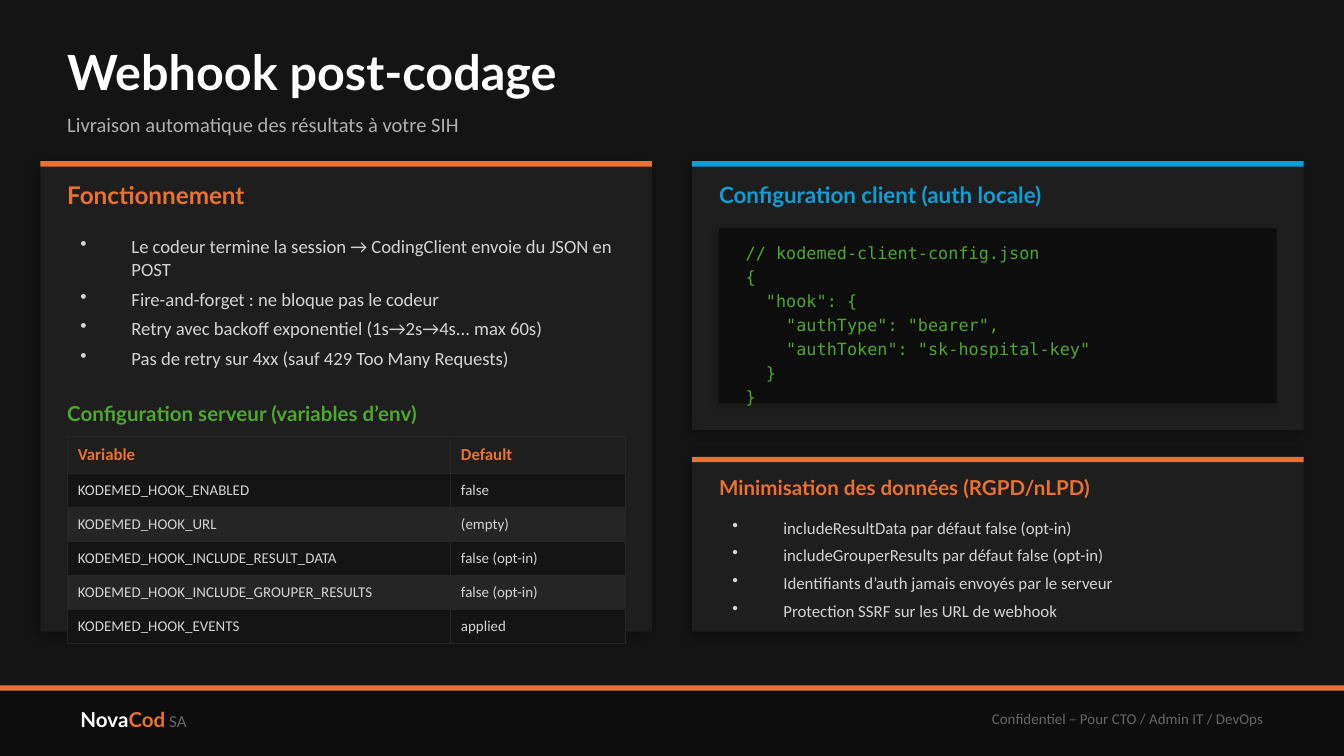
from dataclasses import dataclass

import pptx
import pptx.dml.color
import pptx.enum.shapes
import pptx.enum.text
import pptx.oxml
import pptx.oxml.ns
import pptx.util
from pptx.util import Inches

ALIGN = pptx.enum.text.PP_ALIGN
ANCHOR = pptx.enum.text.MSO_ANCHOR


@dataclass(frozen=True)
class Theme:
    background: str = "141414"
    panel: str = "1E1E1E"
    dark: str = "0D0D0D"
    stripe: str = "252525"
    orange: str = "E97132"
    blue: str = "0F9ED5"
    green: str = "4EA72E"
    white: str = "FFFFFF"
    body: str = "D4D4D4"
    subtitle: str = "B0B0B0"
    muted: str = "666666"
    heading_font: str = "Lato"
    body_font: str = "Calibri"
    code_font: str = "DejaVu Sans Mono"
    title_size: int = 26
    panel_size: int = 13
    client_size: int = 12
    medium_size: int = 11
    list_size: int = 10
    small_size: int = 9
    tiny_size: int = 8


THEME = Theme()


@dataclass(frozen=True)
class Box:
    left: float
    top: float
    width: float
    height: float

    def lengths(self) -> list:
        return [Inches(v) for v in (self.left, self.top, self.width, self.height)]


@dataclass(frozen=True)
class Style:
    size: int
    color: str
    font: str = THEME.body_font
    bold: bool = False


@dataclass(frozen=True)
class Shadow:
    opacity: int
    blur: int
    distance: int


@dataclass(frozen=True)
class Panel:
    box: Box
    accent: str
    heading: str
    heading_size: int
    heading_height: float


PANEL_SHADOW = Shadow(35, 8, 3)
CODE_SHADOW = Shadow(20, 4, 2)
ACCENT_HEIGHT = 0.04
PADDING = 0.2


def rgb(color: str):
    return pptx.dml.color.RGBColor.from_string(color)


def add_rectangle(slide, box: Box, color: str, shadow: Shadow | None = None) -> None:
    shape = slide.shapes.add_shape(pptx.enum.shapes.MSO_SHAPE.RECTANGLE, *box.lengths())
    shape.fill.solid()
    shape.fill.fore_color.rgb = rgb(color)
    shape.line.fill.background()
    shape.shadow.inherit = False
    if shadow:
        effects = shape.element.spPr.find(pptx.oxml.ns.qn("a:effectLst"))
        effects.append(pptx.oxml.parse_xml(
            f'<a:outerShdw {pptx.oxml.ns.nsdecls("a")} blurRad="{pptx.util.Pt(shadow.blur)}" '
            f'dist="{pptx.util.Pt(shadow.distance)}" dir="{135 * 60000}" algn="bl" '
            f'rotWithShape="0"><a:srgbClr val="000000">'
            f'<a:alpha val="{shadow.opacity * 1000}"/></a:srgbClr></a:outerShdw>'))


def add_run(paragraph, text: str, style: Style) -> None:
    run = paragraph.add_run()
    run.text = text
    run.font.name = style.font
    run.font.size = pptx.util.Pt(style.size)
    run.font.bold = style.bold
    run.font.color.rgb = rgb(style.color)


def add_frame(slide, box: Box, anchor, inset: bool = True):
    frame = slide.shapes.add_textbox(*box.lengths()).text_frame
    frame.word_wrap = True
    frame.vertical_anchor = anchor
    if not inset:
        frame.margin_left = frame.margin_right = Inches(0)
        frame.margin_top = frame.margin_bottom = Inches(0)
    return frame


def add_line(slide, box: Box, runs: list[tuple[str, Style]], inset: bool = False,
             align=ALIGN.LEFT) -> None:
    paragraph = add_frame(slide, box, ANCHOR.MIDDLE, inset).paragraphs[0]
    paragraph.alignment = align
    for text, style in runs:
        add_run(paragraph, text, style)


def add_lines(slide, box: Box, lines: list[str], style: Style, space: int,
              bullets: bool = False) -> None:
    frame = add_frame(slide, box, ANCHOR.TOP)
    for index, text in enumerate(lines):
        paragraph = frame.add_paragraph() if index else frame.paragraphs[0]
        if bullets:
            properties = paragraph._p.get_or_add_pPr()
            properties.set("marL", str(Inches(0.38)))
            properties.set("indent", str(Inches(-0.38)))
            properties.append(pptx.oxml.parse_xml(
                f'<a:buChar {pptx.oxml.ns.nsdecls("a")} char="•"/>'))
        paragraph.space_after = pptx.util.Pt(space)
        add_run(paragraph, text, style)


def add_panel(slide, panel: Panel) -> None:
    box = panel.box
    add_rectangle(slide, box, THEME.panel, PANEL_SHADOW)
    add_rectangle(slide, Box(box.left, box.top, box.width, ACCENT_HEIGHT), panel.accent)
    heading_box = Box(box.left + PADDING, box.top + 0.1, box.width - 2 * PADDING,
                      panel.heading_height)
    add_line(slide, heading_box, [(panel.heading, Style(
        panel.heading_size, panel.accent, THEME.heading_font, True))])


def fill_cell(cell, text: str, style: Style, color: str) -> None:
    cell.fill.solid()
    cell.fill.fore_color.rgb = rgb(color)
    cell.vertical_anchor = ANCHOR.MIDDLE
    cell.margin_left = cell.margin_right = Inches(0.08)
    cell.margin_top = cell.margin_bottom = Inches(0.06)
    add_run(cell.text_frame.paragraphs[0], text, style)
    for index, side in enumerate("LRTB"):
        cell._tc.get_or_add_tcPr().insert(index, pptx.oxml.parse_xml(
            f'<a:ln{side} {pptx.oxml.ns.nsdecls("a")} w="{pptx.util.Pt(0.5)}"><a:solidFill>'
            f'<a:srgbClr val="{THEME.stripe}"/></a:solidFill></a:ln{side}>'))


def add_variable_table(slide, box: Box, rows: list[tuple[str, str]]) -> None:
    table = slide.shapes.add_table(len(rows), 2, *box.lengths()).table
    table.first_row = table.horz_banding = False
    for column, width in zip(table.columns, (2.85, 1.3)):
        column.width = Inches(width)
    for index, values in enumerate(rows):
        table.rows[index].height = Inches(0.24 if index else 0.27)
        if index:
            style = Style(THEME.tiny_size, THEME.body)
            color = THEME.background if index % 2 else THEME.stripe
        else:
            style = Style(THEME.small_size, THEME.orange, bold=True)
            color = THEME.panel
        for column, text in enumerate(values):
            fill_cell(table.cell(index, column), text, style, color)


def main() -> None:
    presentation = pptx.Presentation()
    presentation.slide_width = Inches(10)
    presentation.slide_height = Inches(10 * 9 / 16)
    slide = presentation.slides.add_slide(presentation.slide_layouts[6])
    slide.background.fill.solid()
    slide.background.fill.fore_color.rgb = rgb(THEME.background)

    # Footer
    add_rectangle(slide, Box(0, 5.1, 10, 0.53), THEME.dark)
    add_rectangle(slide, Box(0, 5.1, 10, ACCENT_HEIGHT), THEME.orange)
    add_line(slide, Box(0.5, 5.15, 3, 0.4), [
        ("Nova", Style(THEME.medium_size, THEME.white, THEME.heading_font, True)),
        ("Cod", Style(THEME.medium_size, THEME.orange, THEME.heading_font, True)),
        (" SA", Style(THEME.small_size, THEME.muted))], inset=True)
    add_line(slide, Box(5.5, 5.15, 4, 0.4), [
        ("Confidentiel – Pour CTO / Admin IT / DevOps", Style(THEME.tiny_size, THEME.muted))],
        inset=True, align=ALIGN.RIGHT)

    # Title
    add_line(slide, Box(0.5, 0.25, 9, 0.55), [("Webhook post-codage", Style(
        THEME.title_size, THEME.white, THEME.heading_font, True))])
    add_line(slide, Box(0.5, 0.75, 9, 0.35), [(
        "Livraison automatique des résultats à votre SIH",
        Style(THEME.medium_size, THEME.subtitle))])

    # How it works and server variables
    add_panel(slide, Panel(Box(0.3, 1.2, 4.55, 3.5), THEME.orange, "Fonctionnement",
                           THEME.panel_size, 0.3))
    add_lines(slide, Box(0.5, 1.7, 4.15, 1.2), [
        "Le codeur termine la session → CodingClient envoie du JSON en POST",
        "Fire-and-forget : ne bloque pas le codeur",
        "Retry avec backoff exponentiel (1s→2s→4s... max 60s)",
        "Pas de retry sur 4xx (sauf 429 Too Many Requests)",
    ], Style(THEME.list_size, THEME.body), 4, bullets=True)
    add_line(slide, Box(0.5, 2.95, 4.15, 0.25), [(
        "Configuration serveur (variables d’env)",
        Style(THEME.medium_size, THEME.green, THEME.heading_font, True))])
    add_variable_table(slide, Box(0.5, 3.25, 4.15, 1), [
        ("Variable", "Default"),
        ("KODEMED_HOOK_ENABLED", "false"),
        ("KODEMED_HOOK_URL", "(empty)"),
        ("KODEMED_HOOK_INCLUDE_RESULT_DATA", "false (opt-in)"),
        ("KODEMED_HOOK_INCLUDE_GROUPER_RESULTS", "false (opt-in)"),
        ("KODEMED_HOOK_EVENTS", "applied"),
    ])

    # Client configuration
    add_panel(slide, Panel(Box(5.15, 1.2, 4.55, 2), THEME.blue,
                           "Configuration client (auth locale)", THEME.client_size, 0.3))
    add_rectangle(slide, Box(5.35, 1.7, 4.15, 1.3), THEME.dark, CODE_SHADOW)
    add_lines(slide, Box(5.45, 1.76, 3.95, 1.18), [
        "// kodemed-client-config.json",
        "{",
        '  "hook": {',
        '    "authType": "bearer",',
        '    "authToken": "sk-hospital-key"',
        "  }",
        "}",
    ], Style(THEME.small_size, THEME.green, THEME.code_font), 2)

    # Data minimisation
    add_panel(slide, Panel(Box(5.15, 3.4, 4.55, 1.3), THEME.orange,
                           "Minimisation des données (RGPD/nLPD)", THEME.medium_size, 0.25))
    add_lines(slide, Box(5.35, 3.8, 4.15, 0.8), [
        "includeResultData par défaut false (opt-in)",
        "includeGrouperResults par défaut false (opt-in)",
        "Identifiants d’auth jamais envoyés par le serveur",
        "Protection SSRF sur les URL de webhook",
    ], Style(THEME.small_size, THEME.body), 4, bullets=True)

    presentation.save("out.pptx")


if __name__ == "__main__":
    main()
